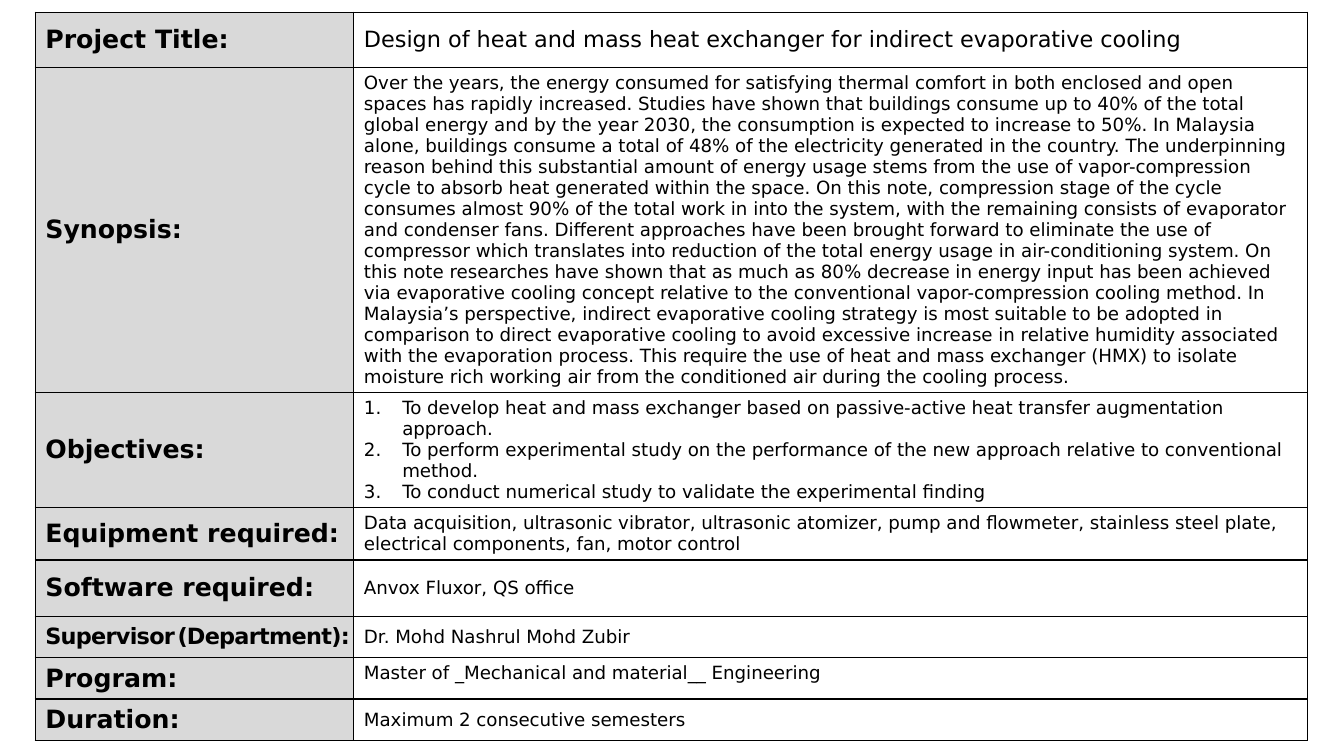
from lxml.etree import SubElement as Sub
from pptx import Presentation
from pptx.dml.color import RGBColor as RGB
from pptx.enum.text import MSO_ANCHOR as Anchor
from pptx.oxml.ns import qn
from pptx.util import Inches, Pt

COLORS = {"ink": "000000", "label": "D9D9D9"}
FONT = "DejaVu Sans"


def put(para, text, size=13, bold=False, gap=None):
    run = para.add_run()
    run.text = text
    font = run.font
    font.name, font.size, font.bold = FONT, Pt(size), bold
    font.color.rgb = RGB.from_string(COLORS["ink"])
    if gap is not None:
        run._r.get_or_add_rPr().set("spc", str(int(gap * 100)))


def frame(cell, width=1):
    props = cell._tc.get_or_add_tcPr()
    for place, side in enumerate(("lnL", "lnR", "lnT", "lnB")):
        line = Sub(props, qn("a:" + side), w=str(Pt(width)))
        fill = Sub(line, qn("a:solidFill"))
        Sub(fill, qn("a:srgbClr"), val=COLORS["ink"])
        props.insert(place, line)


# Wording: row height, label, paragraphs
synopsis = " ".join([
    "Over the years, the energy consumed for satisfying thermal comfort in both "
    "enclosed and open spaces has rapidly increased.",
    "Studies have shown that buildings consume up to 40% of the total global "
    "energy and by the year 2030, the consumption is expected to increase to 50%.",
    "In Malaysia alone, buildings consume a total of 48% of the electricity "
    "generated in the country.",
    "The underpinning reason behind this substantial amount of energy usage stems "
    "from the use of vapor-compression cycle to absorb heat generated within the "
    "space.",
    "On this note, compression stage of the cycle consumes almost 90% of the total "
    "work in into the system, with the remaining consists of evaporator and "
    "condenser fans.",
    "Different approaches have been brought forward to eliminate the use of "
    "compressor which translates into reduction of the total energy usage in "
    "air-conditioning system.",
    "On this note researches have shown that as much as 80% decrease in energy "
    "input has been achieved via evaporative cooling concept relative to the "
    "conventional vapor-compression cooling method.",
    "In Malaysia’s perspective, indirect evaporative cooling strategy is most "
    "suitable to be adopted in comparison to direct evaporative cooling to avoid "
    "excessive increase in relative humidity associated with the evaporation "
    "process.",
    "This require the use of heat and mass exchanger (HMX) to isolate moisture "
    "rich working air from the conditioned air during the cooling process.",
])
goals = [
    "To develop heat and mass exchanger based on passive-active heat transfer "
    "augmentation approach.",
    "To perform experimental study on the performance of the new approach "
    "relative to conventional method.",
    "To conduct numerical study to validate the experimental finding",
]
tools = (
    "Data acquisition, ultrasonic vibrator, ultrasonic atomizer, pump and "
    "flowmeter, stainless steel plate, electrical components, fan, motor control"
)
title = "Design of heat and mass heat exchanger for indirect evaporative cooling"
rows = [
    (0.55, "Project Title:", [title]),
    (2.66, "Synopsis:", [synopsis]),
    (1.14, "Objectives:", goals),
    (0.52, "Equipment required:", [tools]),
    (0.56, "Software required:", ["Anvox Fluxor, QS office"]),
    (0.41, "Supervisor (Department):", ["Dr. Mohd Nashrul Mohd Zubir"]),
    (0.41, "Program:", ["Master of _Mechanical and material__ Engineering"]),
    (0.41, "Duration:", ["Maximum 2 consecutive semesters"]),
]

# Slide
deck = Presentation()
deck.slide_width, deck.slide_height = Inches(13.33), Inches(7.5)
slide = deck.slides.add_slide(deck.slide_layouts[6])

# Table
table = slide.shapes.add_table(
    len(rows), 2, Inches(0.35), Inches(0.12), Inches(12.62), Inches(7.39)
).table
table.first_row = table.horz_banding = False
for col, width in zip(table.columns, (3.16, 9.46)):
    col.width = Inches(width)

for n, (height, label, paras) in enumerate(rows):
    table.rows[n].height = Inches(height)
    left, right = table.cell(n, 0), table.cell(n, 1)
    left.fill.solid()
    left.fill.fore_color.rgb = RGB.from_string(COLORS["label"])
    right.fill.background()
    for cell in (left, right):
        cell.vertical_anchor = Anchor.MIDDLE
        frame(cell)

    # Label
    head = left.text_frame.paragraphs[0]
    if label.startswith("Supervisor"):
        left.margin_right = 0
        first, last = label.split()
        for text, size in ((first, 16), (" ", 5), (last, 16)):
            put(head, text, size=size, bold=True, gap=-0.5)
    else:
        put(head, label, size=18, bold=True)

    # Entry, numbered when it has several paragraphs
    if label == "Program:":
        right.vertical_anchor = Anchor.TOP
    body = right.text_frame
    for k, text in enumerate(paras):
        para = body.add_paragraph() if k else body.paragraphs[0]
        put(para, text, size=16 if n == 0 else 13)
        if len(paras) > 1:
            props = para._p.get_or_add_pPr()
            props.set("marL", str(Inches(0.38)))
            props.set("indent", str(Inches(-0.38)))
            Sub(props, qn("a:buFont"), typeface="+mj-lt")
            Sub(props, qn("a:buAutoNum"), type="arabicPeriod")

deck.save("out.pptx")
